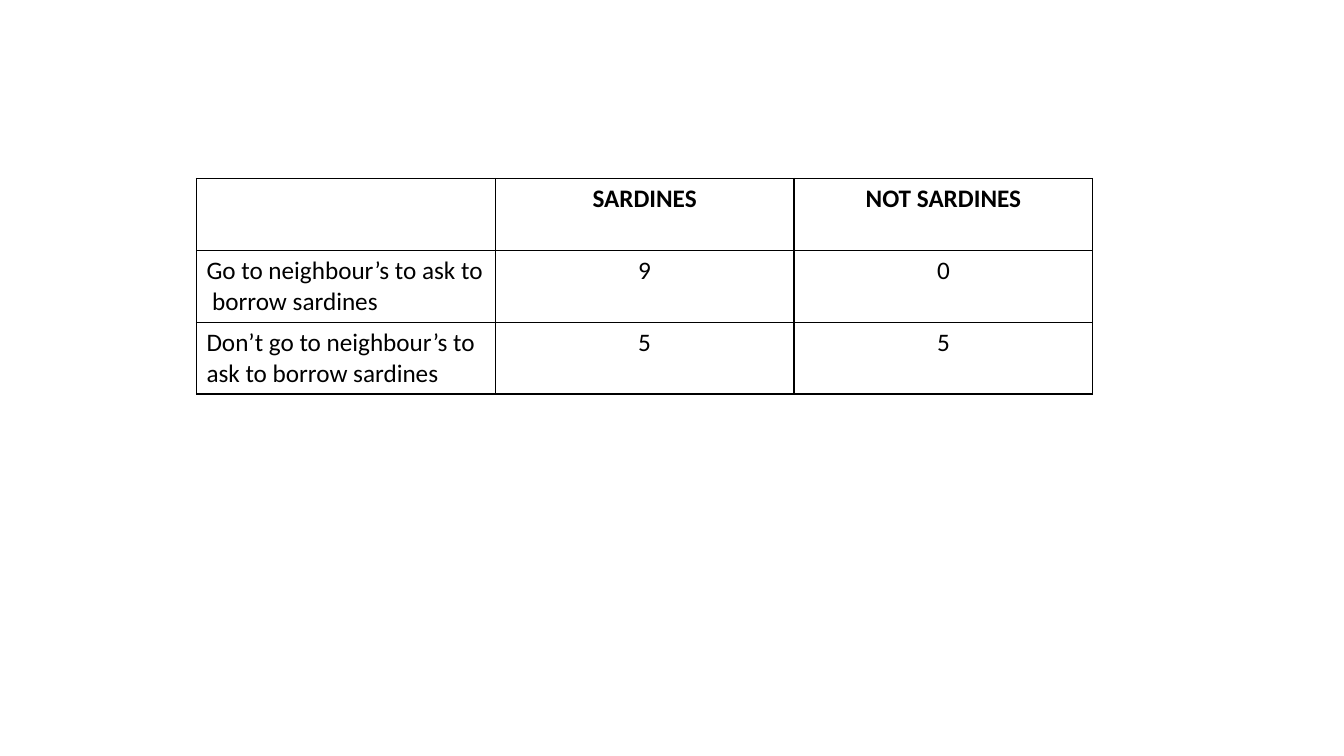
"""Build a slide with a table of sardine outcomes by visit to the neighbour."""
from lxml import etree
from pptx import Presentation, util as u
from pptx.dml.color import RGBColor
from pptx.enum import text
from pptx.oxml.ns import qn

ROWS = [
    ("", "SARDINES", "NOT SARDINES"),
    ("Go to neighbour’s to ask to  borrow sardines", "9", "0"),
    ("Don’t go to neighbour’s to ask to borrow sardines", "5", "5"),
]
COLORS = {"ink": "000000"}
FONT, SIZE = "Calibri", u.Pt(18)
LEFT, TOP = u.Cm(4.95), u.Cm(4.5)
COL_W, ROW_H = u.Cm(7.53), u.Cm(1.81)


def add_borders(cell):
    tcPr = cell._tc.get_or_add_tcPr()
    for i, side in enumerate(("lnL", "lnR", "lnT", "lnB")):
        ln = etree.Element(qn("a:" + side), w=str(u.Pt(1)))
        fill = etree.SubElement(ln, qn("a:solidFill"))
        etree.SubElement(fill, qn("a:srgbClr"), val=COLORS["ink"])
        tcPr.insert(i, ln)


def fill_cell(cell, label, row, col):
    cell.fill.background()
    add_borders(cell)
    cell.text = label
    p = cell.text_frame.paragraphs[0]
    p.alignment = text.PP_ALIGN.CENTER if col else text.PP_ALIGN.LEFT
    p.font.name, p.font.size, p.font.bold = FONT, SIZE, row == 0
    p.font.color.rgb = RGBColor.from_string(COLORS["ink"])


def main():
    prs = Presentation()
    prs.slide_width, prs.slide_height = u.Cm(33.87), u.Cm(19.05)
    s = prs.slides.add_slide(prs.slide_layouts[6])
    n_rows, n_cols = len(ROWS), len(ROWS[0])
    table = s.shapes.add_table(n_rows, n_cols, LEFT, TOP,
                               COL_W * n_cols, ROW_H * n_rows).table
    table.horz_banding = False
    table.first_row = False
    for i, labels in enumerate(ROWS):
        for j, label in enumerate(labels):
            fill_cell(table.cell(i, j), label, i, j)
    prs.save("out.pptx")


if __name__ == "__main__":
    main()
